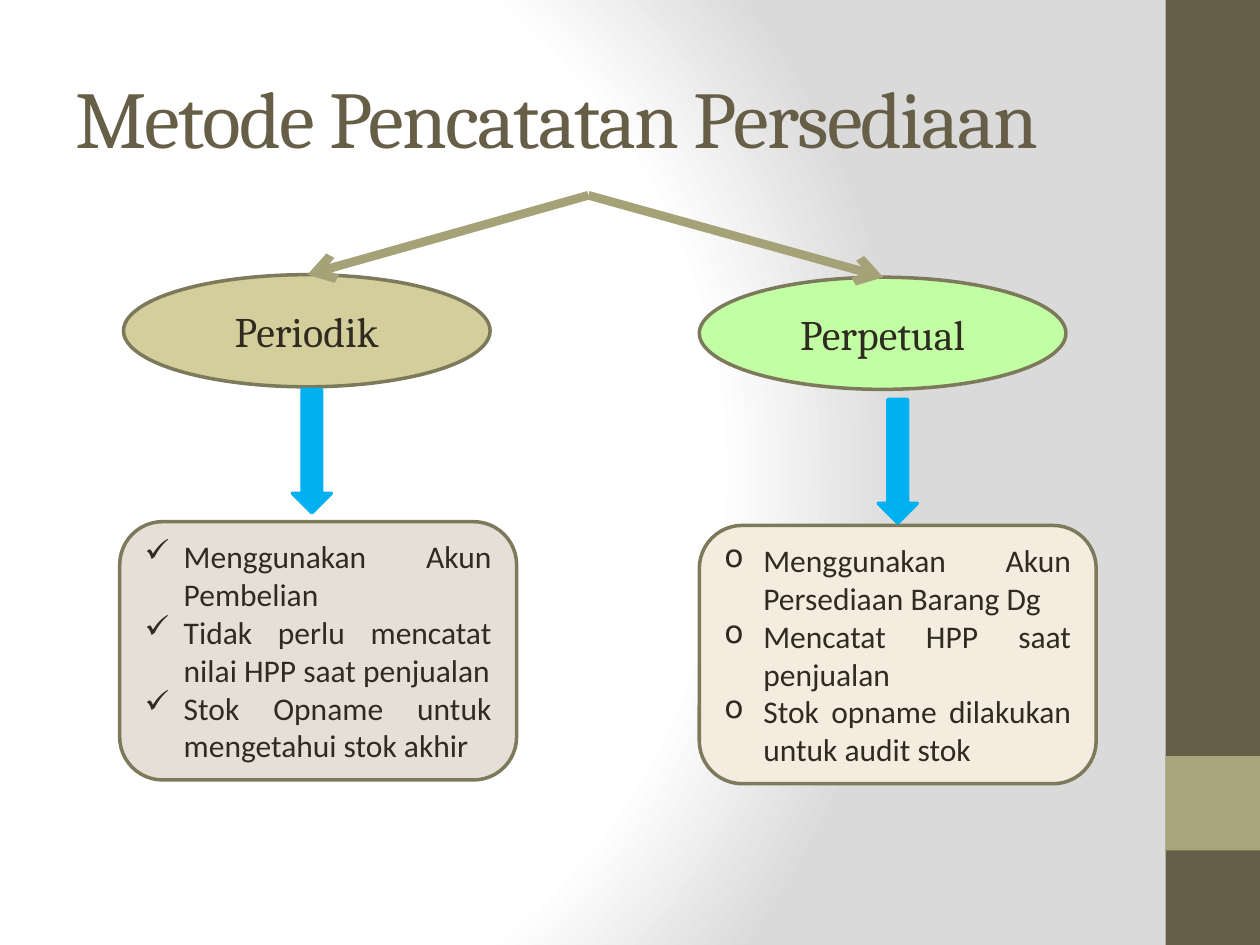
from pptx import Presentation
from pptx import util as u
from pptx.dml.color import RGBColor
from pptx.enum import shapes as sh, text as tx
from pptx.oxml import parse_xml
from pptx.oxml.ns import nsdecls, qn
from lxml import etree

OLIVE, SAND, INK = "675E47", "A9A57C", "2F2B20"
OUTLINE, BRANCH, SKY = "7D7A5C", "A6A278", "00B0F0"
SERIF, SANS = "Cambria", "Calibri"
GRADIENT = [(0, "FFFFFF"), (75, "FFFFFF"), (100, "DADADA")]

# Each method: text, fills, places (left, top, width, height) and arrow end
METHODS = [
    {"name": "Periodik", "name_fill": "D3CE9B", "name_box": (0.98, 2.18, 2.91, 0.89),
     "arrow_box": (2.32, 3.09, 0.31, 0.98), "branch_end": (2.44, 2.18),
     "points_fill": "E4E0D7", "points_box": (0.95, 4.14, 3.15, 2.05), "bullet": "✓",
     "points": ["Menggunakan Akun Pembelian",
                "Tidak perlu mencatat nilai HPP saat penjualan",
                "Stok Opname untuk mengetahui stok akhir"]},
    {"name": "Perpetual", "name_fill": "C2FEA4", "name_box": (5.55, 2.2, 2.91, 0.89),
     "arrow_box": (6.97, 3.17, 0.31, 0.98), "branch_end": (7.01, 2.2),
     "points_fill": "F4ECDF", "points_box": (5.55, 4.17, 3.15, 2.05), "bullet": "o",
     "points": ["Menggunakan Akun Persediaan Barang Dg",
                "Mencatat HPP saat penjualan",
                "Stok opname dilakukan untuk audit stok"]},
]


def color(hex_value):
    return RGBColor.from_string(hex_value)


def inches(box):
    return [u.Inches(value) for value in box]


def apply(target, values):
    for name, value in values.items():
        setattr(target, name, value)


def add_block(slide, kind, box, fill, outline=None):
    block = slide.shapes.add_shape(kind, *inches(box))
    block.shadow.inherit = False
    block.fill.solid()
    block.fill.fore_color.rgb = color(fill)
    if outline:
        block.line.color.rgb = color(outline)
        block.line.width = u.Pt(2)
    else:
        block.line.fill.background()
    return block


def write(block, lines, face, size, ink, align, bullet=None):
    frame = block.text_frame
    apply(frame, {"word_wrap": True, "vertical_anchor": tx.MSO_ANCHOR.MIDDLE})
    for index, line in enumerate(lines):
        paragraph = frame.paragraphs[0] if index == 0 else frame.add_paragraph()
        paragraph.alignment = align
        if bullet:
            props = paragraph._p.get_or_add_pPr()
            indent = u.Inches(0.31)
            props.set("marL", str(indent))
            props.set("indent", str(-indent))
            etree.SubElement(props, qn("a:buChar")).set("char", bullet)
        run = paragraph.add_run()
        run.text = line
        apply(run.font, {"name": face, "size": u.Pt(size)})
        run.font.color.rgb = color(ink)


def paint_background(slide):
    stops = "".join(f'<a:gs pos="{pos * 1000}"><a:srgbClr val="{shade}"/></a:gs>'
                    for pos, shade in GRADIENT)
    slide._element.cSld.insert(0, parse_xml(
        f'<p:bg {nsdecls("p", "a")}><p:bgPr><a:gradFill rotWithShape="1">'
        f'<a:gsLst>{stops}</a:gsLst><a:path path="circle">'
        '<a:fillToRect l="20000" t="50000" r="100000" b="50000"/></a:path>'
        '</a:gradFill><a:effectLst/></p:bgPr></p:bg>'))


def add_sidebar(slide, box):
    left, top, width, height = box
    rectangle = sh.MSO_SHAPE.RECTANGLE
    add_block(slide, rectangle, box, OLIVE)
    add_block(slide, rectangle, (left, top + height * 0.8, width, width), SAND)


def add_title(slide, box):
    title = slide.shapes.add_textbox(*inches(box))
    write(title, ["Metode Pencatatan Persediaan"], SERIF, 46, OLIVE, tx.PP_ALIGN.LEFT)
    # Tighten the letters by one point
    title.text_frame.paragraphs[0].runs[0].font._element.set("spc", "-100")


def add_branch(slide, start, end):
    branch = slide.shapes.add_connector(sh.MSO_CONNECTOR.STRAIGHT, *inches(start + end))
    branch.line.color.rgb = color(BRANCH)
    branch.line.width = u.Pt(5)
    etree.SubElement(branch.line._get_or_add_ln(), qn("a:tailEnd")).set("type", "arrow")
    etree.SubElement(branch._element.spPr, qn("a:effectLst"))


def add_method(slide, method, fork):
    # Method name
    name = add_block(slide, sh.MSO_SHAPE.OVAL, method["name_box"],
                     method["name_fill"], OUTLINE)
    write(name, [method["name"]], SERIF, 24, INK, tx.PP_ALIGN.CENTER)
    # Its features
    points = add_block(slide, sh.MSO_SHAPE.ROUNDED_RECTANGLE, method["points_box"],
                       method["points_fill"], OUTLINE)
    write(points, method["points"], SANS, 18, INK, tx.PP_ALIGN.JUSTIFY, method["bullet"])
    # Arrows from the title and down to the features
    add_branch(slide, fork, method["branch_end"])
    add_block(slide, sh.MSO_SHAPE.DOWN_ARROW, method["arrow_box"], SKY, SKY)


def main():
    deck = Presentation()
    apply(deck, {"slide_width": u.Inches(10), "slide_height": u.Inches(7.5)})
    slide = deck.slides.add_slide(deck.slide_layouts[6])
    paint_background(slide)
    add_sidebar(slide, (9.25, 0, 0.75, 7.5))
    add_title(slide, (0.5, 0.3, 8.33, 1.25))
    for method in METHODS:
        add_method(slide, method, fork=(4.67, 1.55))
    deck.save("out.pptx")


if __name__ == "__main__":
    main()
